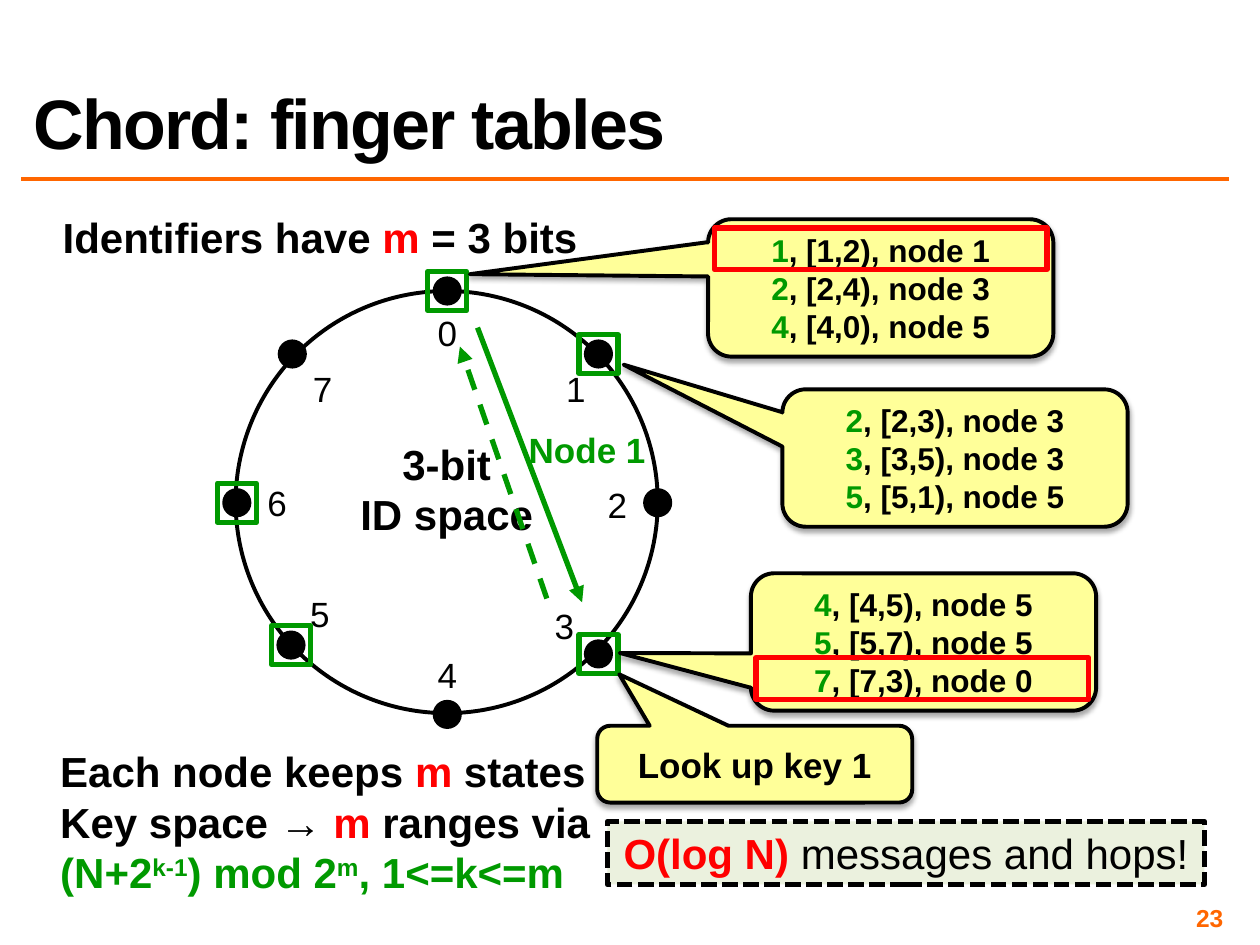
from pptx import Presentation
from pptx import util as u
from pptx.dml.color import RGBColor
from pptx.enum import dml, shapes, text
from pptx.oxml import parse_xml
from pptx.oxml.ns import nsdecls

BLACK, GREEN, RED, ORANGE = "000000", "009900", "FF0000", "FF6600"
YELLOW, MINT = "FFFF99", "EBF1DE"
KIND, DASH = shapes.MSO_SHAPE, dml.MSO_LINE
LEFT, CENTER, RIGHT = text.PP_ALIGN.LEFT, text.PP_ALIGN.CENTER, text.PP_ALIGN.RIGHT
TOP, MIDDLE, BOTTOM = text.MSO_ANCHOR.TOP, text.MSO_ANCHOR.MIDDLE, text.MSO_ANCHOR.BOTTOM
color = RGBColor.from_string

deck = Presentation()
deck.slide_width, deck.slide_height = u.Inches(10), u.Inches(7.5)
page = deck.slides.add_slide(deck.slide_layouts[6])
column, row = deck.slide_width / 100, deck.slide_height / 75


def draw(kind, left, top, width, height, fill=None, line=BLACK, weight=2.25):
    shape = page.shapes.add_shape(
        kind, int(left * column), int(top * row), int(width * column), int(height * row))
    shape.shadow.inherit = False
    if fill:
        shape.fill.solid()
        shape.fill.fore_color.rgb = color(fill)
    else:
        shape.fill.background()
    if line:
        shape.line.color.rgb = color(line)
        shape.line.width = u.Pt(weight)
    else:
        shape.line.fill.background()
    return shape


def write(box, paragraphs, size, bold=True, align=CENTER, anchor=TOP, wrap=False):
    frame = box.text_frame
    frame.word_wrap, frame.vertical_anchor = wrap, anchor
    for index, spans in enumerate(paragraphs):
        para = frame.add_paragraph() if index else frame.paragraphs[0]
        para.alignment = align
        para.font.name, para.font.size, para.font.bold = "Arial", u.Pt(size), bold
        for words, shade in spans:
            span = para.add_run()
            span.text = words
            span.font.color.rgb = color(shade)
    return frame


rule = page.shapes.add_connector(
    shapes.MSO_CONNECTOR.STRAIGHT,
    int(1.7 * column), int(14.2 * row), int(97.5 * column), int(14.2 * row))
rule.line.color.rgb, rule.line.width = color(ORANGE), u.Pt(2)
rule._element.spPr.append(parse_xml(f"<a:effectLst {nsdecls('a')}/>"))

number = draw(KIND.RECTANGLE, 74.2, 71.7, 23.3, 2.3, line=None)
frame = write(number, [[("23", ORANGE)]], 14, align=RIGHT, anchor=MIDDLE, wrap=True)
frame.margin_left = frame.margin_right = frame.margin_top = frame.margin_bottom = u.Inches(0.04)

title = draw(KIND.RECTANGLE, 1.7, 1.7, 95.8, 11.7, line=None)
frame = write(title, [[("Chord: finger tables", BLACK)]], 40,
              align=LEFT, anchor=BOTTOM, wrap=True)
frame.paragraphs[0].line_spacing = 0.8
frame.paragraphs[0].runs[0].font._element.set("spc", "-100")

identifiers = draw(KIND.RECTANGLE, 3.8, 16.3, 43.2, 5, line=None)
write(identifiers, [[("Identifiers have ", BLACK), ("m", RED), (" = 3 bits", BLACK)]], 24)

states = draw(KIND.RECTANGLE, 3.8, 58.7, 44.4, 13.1, line=None)
frame = write(states, [
    [("Each node keeps ", BLACK), ("m", RED), (" states", BLACK)],
    [("Key space → ", BLACK), ("m", RED), (" ranges via", BLACK)],
    [(part, GREEN) for part in ("(N+2", "k-1", ") mod 2", "m", ", 1<=k<=m")],
], 24, align=LEFT)
for exponent in frame.paragraphs[2].runs[1::2]:
    exponent.font._element.set("baseline", "30000")

cost = draw(KIND.RECTANGLE, 48.2, 65.2, 47.4, 5, MINT, weight=3)
cost.line.dash_style = DASH.SQUARE_DOT
frame = write(cost, [[("O(log N) ", RED), ("messages and hops!", BLACK)]], 24)
frame.paragraphs[0].runs[1].font.bold = False

draw(KIND.OVAL, 18.7, 23.1, 33.5, 33.5)
nodes = [
    (35.5, 23.1, 35.5, 26.4), (47.5, 28.1, 45.7, 30.9),
    (52.2, 39.9, 49, 40.1), (47.5, 51.9, 44.8, 49.7),
    (35.5, 56.7, 35.5, 53.6), (23.1, 51.2, 25.4, 48.7),
    (18.8, 39.9, 22, 39.9), (23.2, 28.1, 25.6, 30.9),
]
for name, (x, y, label_x, label_y) in enumerate(nodes):
    draw(KIND.OVAL, x - 1, y - 1, 2, 2, BLACK)
    label = draw(KIND.RECTANGLE, label_x - 1.8, label_y - 2.2, 3.6, 4.4, line=None)
    write(label, [[(str(name), BLACK)]], 20, bold=False)
for name in (0, 1, 3, 5, 6):
    x, y = nodes[name][:2]
    draw(KIND.RECTANGLE, x - 1.55, y - 1.55, 3.1, 3.1, line=GREEN, weight=3)

space = draw(KIND.RECTANGLE, 27.5, 34.3, 15.9, 9.1, line=None)
write(space, [[("3-bit", BLACK)], [("ID space", BLACK)]], 24)

fingers = [
    (62.1, 30.9, -0.96, -0.68, [("2", "[2,3), node 3"), ("3", "[3,5), node 3"), ("5", "[5,1), node 5")]),
    (56.2, 17.4, -1.19, -0.1, [("1", "[1,2), node 1"), ("2", "[2,4), node 3"), ("4", "[4,0), node 5")]),
    (59.6, 45.5, -0.88, 0.08, [("4", "[4,5), node 5"), ("5", "[5,7), node 5"), ("7", "[7,3), node 0")]),
]
callouts = [
    (left, top, 27.4, 10.9, tip_x, tip_y, 18,
     [[(start, GREEN), (", " + entry, BLACK)] for start, entry in table])
    for left, top, tip_x, tip_y, table in fingers
]
callouts.append((47.4, 57.6, 25, 6.1, -0.43, -1.17, 20, [[("Look up key 1", BLACK)]]))
for left, top, width, height, tip_x, tip_y, size, lines in callouts:
    callout = draw(KIND.ROUNDED_RECTANGULAR_CALLOUT, left, top, width, height, YELLOW)
    callout.adjustments[0], callout.adjustments[1], callout.adjustments[2] = tip_x, tip_y, 0.17
    callout._element.spPr.find("{*}effectLst").append(parse_xml(
        f'<a:outerShdw {nsdecls("a")} blurRad="{u.Pt(3.1)}" dist="{u.Pt(1.8)}" dir="5400000" '
        'rotWithShape="0"><a:srgbClr val="000000"><a:alpha val="35000"/></a:srgbClr></a:outerShdw>'))
    write(callout, lines, size, anchor=MIDDLE, wrap=True)

for x1, y1, x2, y2, dash in [
    (43.4, 47.5, 36.5, 27.5, DASH.DASH), (37.9, 26, 46.2, 47.8, DASH.SOLID),
]:
    arrow = page.shapes.add_connector(
        shapes.MSO_CONNECTOR.STRAIGHT,
        int(x1 * column), int(y1 * row), int(x2 * column), int(y2 * row))
    arrow.line.color.rgb, arrow.line.width = color(GREEN), u.Pt(3)
    arrow.line.dash_style = dash
    arrow.line._get_or_add_ln().append(parse_xml(f'<a:tailEnd {nsdecls("a")} type="triangle"/>'))
    arrow._element.spPr.append(parse_xml(f"<a:effectLst {nsdecls('a')}/>"))

for left, top in [(60, 52.2), (56.7, 18.1)]:
    draw(KIND.RECTANGLE, left, top, 26.4, 3.3, line=RED, weight=3)

answer = draw(KIND.RECTANGLE, 40.9, 33.5, 11.4, 4.4, line=None)
write(answer, [[("Node 1", GREEN)]], 20)

deck.save("out.pptx")
